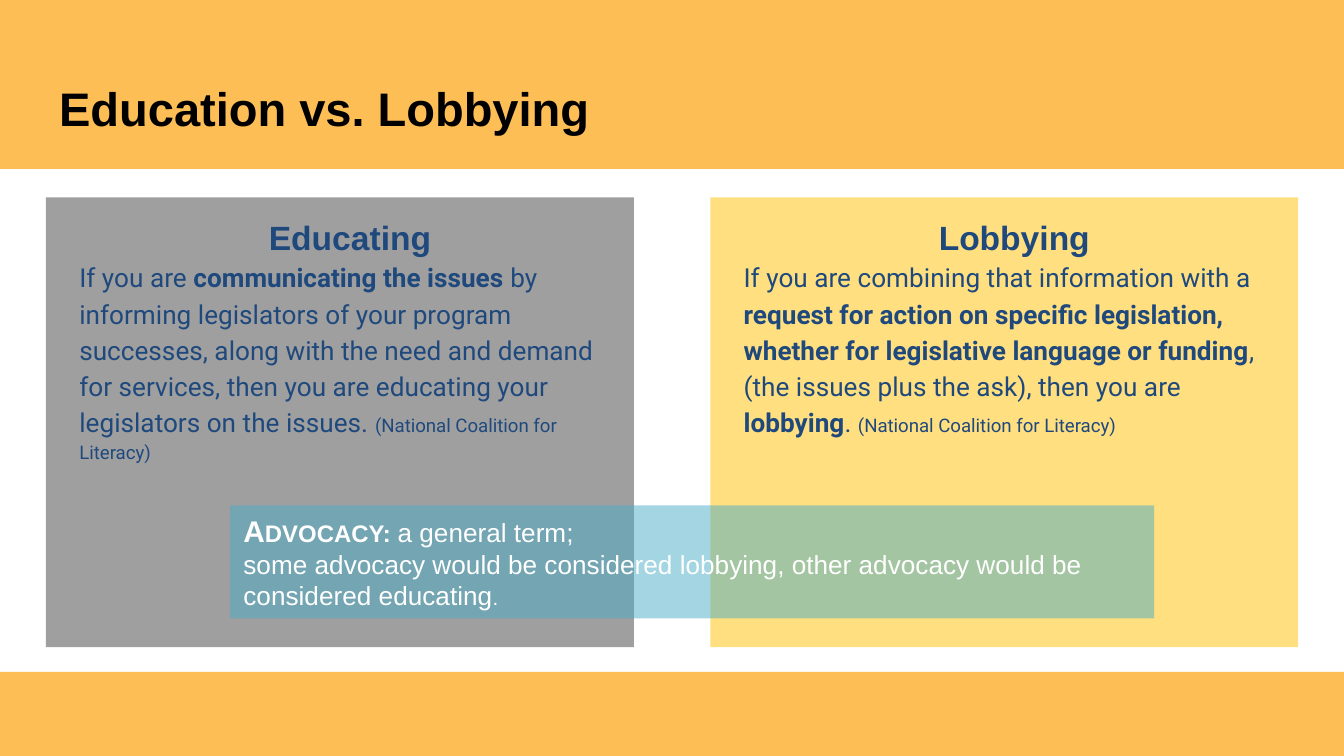
from dataclasses import dataclass
from typing import NamedTuple, Optional

from lxml import etree
from pptx import Presentation
from pptx import util as u
from pptx.dml.color import RGBColor
from pptx.enum import shapes, text
from pptx.oxml.ns import qn


@dataclass(frozen=True)
class Theme:
    band: str = "FDBE56"
    educating: str = "404040"
    lobbying: str = "FFC000"
    advocacy: str = "4BACC6"
    title_ink: str = "000000"
    panel_ink: str = "1F497D"
    advocacy_ink: str = "FFFFFF"
    heading_font: str = "Arial"
    body_font: str = "Roboto"
    title_size: float = 25.2
    heading_size: float = 18
    term_size: float = 16
    body_size: float = 14
    stop_size: float = 11
    source_size: float = 10


THEME = Theme()


class Box(NamedTuple):
    left: float
    top: float
    width: float
    height: float


class Span(NamedTuple):
    text: str
    size: float = THEME.body_size
    bold: bool = False
    font: str = THEME.body_font
    small_caps: bool = False


@dataclass(frozen=True)
class Panel:
    heading: str
    left: float
    fill: str
    body: list[Span]


SLIDE_W, SLIDE_H = 720, 405
PANEL_TOP, PANEL_W, PANEL_H = 105.8, 315, 241
SOURCE = Span("(National Coalition for Literacy)", THEME.source_size)

BANDS = [Box(0, 0, SLIDE_W, 90.5), Box(0, 360, SLIDE_W, 45)]

PANELS = [
    Panel("Educating", 24.6, THEME.educating, [
        Span("If you are "),
        Span("communicating the issues", bold=True),
        Span(" by informing legislators of your program successes, along with "
             "the need and demand for services, then you are educating your "
             "legislators on the issues. "),
        SOURCE,
    ]),
    Panel("Lobbying", 380.5, THEME.lobbying, [
        Span("If you are combining that information with a "),
        Span("request for action on specific legislation, whether for "
             "legislative language or funding", bold=True),
        Span(", (the issues plus the ask), then you are "),
        Span("lobbying", bold=True),
        Span(". "),
        SOURCE,
    ]),
]

ADVOCACY = [
    [Span("Advocacy: ", THEME.term_size, True, THEME.heading_font, True),
     Span("a general term;", font=THEME.heading_font)],
    [Span("some advocacy would be considered lobbying, other advocacy would "
          "be considered educating", font=THEME.heading_font),
     Span(".", THEME.stop_size, font=THEME.heading_font)],
]


def add_rect(s, box: Box, fill: str, opacity: Optional[int] = None):
    sp = s.shapes.add_shape(shapes.MSO_SHAPE.RECTANGLE, *map(u.Pt, box))
    sp.shadow.inherit = False
    sp.line.fill.background()
    sp.fill.solid()
    sp.fill.fore_color.rgb = RGBColor.from_string(fill)
    if opacity is not None:
        color = sp.fill._xPr.find(qn("a:solidFill"))[0]
        etree.SubElement(color, qn("a:alpha")).set("val", str(opacity * 1000))
    return sp


def prepare_frame(sp, anchor, inset: Optional[float] = None):
    tf = sp.text_frame
    tf.word_wrap = True
    tf.vertical_anchor = anchor
    if inset is not None:
        tf.margin_left = tf.margin_right = u.Pt(inset)
        tf.margin_top = tf.margin_bottom = u.Pt(inset)
    return tf


def write_paragraph(p, spans: list[Span], ink: str,
                    align=text.PP_ALIGN.LEFT) -> None:
    p.alignment = align
    for span in spans:
        r = p.add_run()
        r.text = span.text
        r.font.size = u.Pt(span.size)
        r.font.bold = span.bold
        r.font.name = span.font
        r.font.color.rgb = RGBColor.from_string(ink)
        if span.small_caps:
            r.font._element.set("cap", "small")


def add_title(s, title: str) -> None:
    sp = s.shapes.add_textbox(*map(u.Pt, Box(24.6, 35.5, 671, 45)))
    tf = prepare_frame(sp, text.MSO_ANCHOR.TOP, 7.2)
    span = Span(title, THEME.title_size, True, THEME.heading_font)
    write_paragraph(tf.paragraphs[0], [span], THEME.title_ink)


def add_panel(s, panel: Panel) -> None:
    sp = add_rect(s, Box(panel.left, PANEL_TOP, PANEL_W, PANEL_H), panel.fill, 50)
    tf = prepare_frame(sp, text.MSO_ANCHOR.TOP, 7.2)
    heading = Span(panel.heading, THEME.heading_size, True, THEME.heading_font)
    write_paragraph(tf.paragraphs[0], [heading], THEME.panel_ink,
                    text.PP_ALIGN.CENTER)
    write_paragraph(tf.add_paragraph(), panel.body, THEME.panel_ink)
    for p in tf.paragraphs:
        p.line_spacing = 1.15
        pPr = p._p.get_or_add_pPr()
        pPr.set("marL", str(u.Pt(10.8)))
        pPr.set("indent", "0")


def add_advocacy(s) -> None:
    sp = add_rect(s, Box(123.3, 270.8, 495, 60.5), THEME.advocacy, 50)
    tf = prepare_frame(sp, text.MSO_ANCHOR.MIDDLE)
    term, explanation = ADVOCACY
    write_paragraph(tf.paragraphs[0], term, THEME.advocacy_ink)
    write_paragraph(tf.add_paragraph(), explanation, THEME.advocacy_ink)


def main() -> None:
    prs = Presentation()
    prs.slide_width, prs.slide_height = u.Pt(SLIDE_W), u.Pt(SLIDE_H)
    s = prs.slides.add_slide(prs.slide_layouts[6])
    for band in BANDS:
        add_rect(s, band, THEME.band)
    add_title(s, "Education vs. Lobbying")
    for panel in PANELS:
        add_panel(s, panel)
    add_advocacy(s)
    prs.save("out.pptx")


if __name__ == "__main__":
    main()
